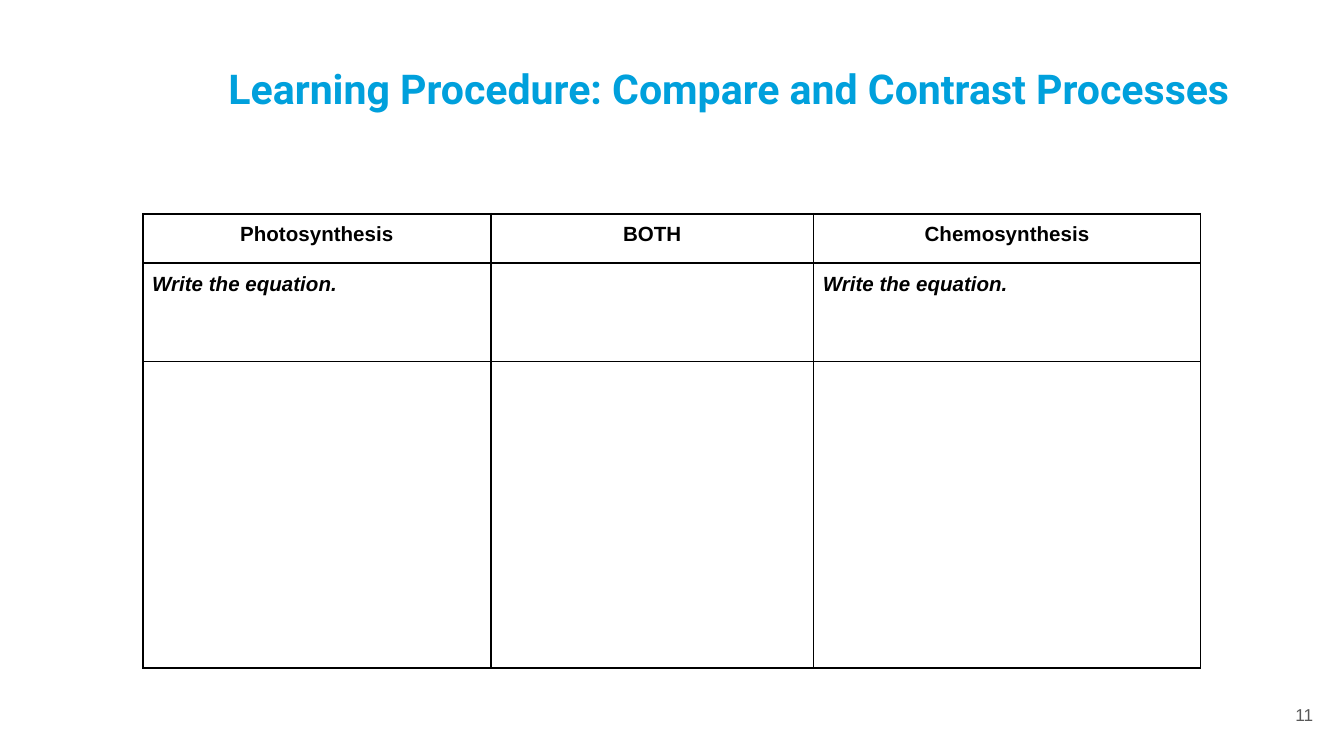
from dataclasses import dataclass

from lxml.etree import SubElement
from pptx import Presentation
from pptx.dml.color import RGBColor
from pptx.enum.text import MSO_ANCHOR as Anchor, MSO_AUTO_SIZE as AutoSize, PP_ALIGN as Align
from pptx.oxml.ns import qn
from pptx.util import Pt

BLUE = RGBColor(0x00, 0xA0, 0xDC)
BLACK = RGBColor(0x00, 0x00, 0x00)
GREY = RGBColor(0x58, 0x58, 0x58)

COL_WIDTHS = (186.5, 172.8, 207.4)
ROW_HEIGHTS = (26.5, 52.8, 164.2)


@dataclass
class Label:
    text: str
    size: float
    color: RGBColor = BLACK
    name: str = "Arial"
    bold: bool = True
    italic: bool = False
    align: Align = Align.LEFT


def write(tf, label: Label) -> None:
    p = tf.paragraphs[0]
    p.alignment = label.align
    r = p.add_run()
    r.text = label.text
    fmt = {"size": Pt(label.size), "name": label.name,
           "bold": label.bold, "italic": label.italic}
    for key, value in fmt.items():
        setattr(r.font, key, value)
    r.font.color.rgb = label.color


def set_frame(tf, anchor: Anchor) -> None:
    fmt = {"word_wrap": True, "auto_size": AutoSize.NONE, "vertical_anchor": anchor}
    fmt |= {f"margin_{side}": Pt(7.2) for side in ("left", "top", "right", "bottom")}
    for key, value in fmt.items():
        setattr(tf, key, value)


def style_cell(cell) -> None:
    for side in ("left", "top", "right", "bottom"):
        setattr(cell, f"margin_{side}", Pt(5))
    tc_pr = cell._tc.get_or_add_tcPr()
    for tag in ("a:lnL", "a:lnR", "a:lnT", "a:lnB"):
        ln = SubElement(tc_pr, qn(tag), w=str(Pt(1)))
        fill = SubElement(ln, qn("a:solidFill"))
        SubElement(fill, qn("a:srgbClr"), val=str(BLACK))
    cell.fill.background()


def add_comparison(s, left: float, top: float, rows: list) -> None:
    table = s.shapes.add_table(
        len(ROW_HEIGHTS), len(COL_WIDTHS), Pt(left), Pt(top),
        Pt(sum(COL_WIDTHS)), Pt(sum(ROW_HEIGHTS))).table
    table.first_row = table.horz_banding = False
    for column, width in zip(table.columns, COL_WIDTHS):
        column.width = Pt(width)
    for row, height, labels in zip(table.rows, ROW_HEIGHTS, rows):
        row.height = Pt(height)
        for cell, label in zip(row.cells, labels):
            style_cell(cell)
            if label:
                write(cell.text_frame, label)


def main() -> None:
    prs = Presentation()
    prs.slide_width, prs.slide_height = Pt(720), Pt(405)
    s = prs.slides.add_slide(prs.slide_layouts[5])

    title = s.shapes.title
    title.left, title.top, title.width, title.height = Pt(115.2), Pt(26.6), Pt(584.6), Pt(45.4)
    set_frame(title.text_frame, Anchor.TOP)
    write(title.text_frame, Label("Learning Procedure: Compare and Contrast Processes",
                                  22, BLUE, "Roboto"))

    headings = [Label(text, 11, align=Align.CENTER)
                for text in ("Photosynthesis", "BOTH", "Chemosynthesis")]
    prompt = Label("Write the equation.", 11, italic=True)
    add_comparison(s, 76.5, 114.5, [headings, [prompt, None, prompt], [None] * 3])

    number = s.shapes.add_textbox(Pt(684), Pt(370.1), Pt(26.6), Pt(25.2))
    set_frame(number.text_frame, Anchor.MIDDLE)
    write(number.text_frame, Label("11", 9.2, GREY, bold=False, align=Align.RIGHT))

    prs.save("out.pptx")


if __name__ == "__main__":
    main()
